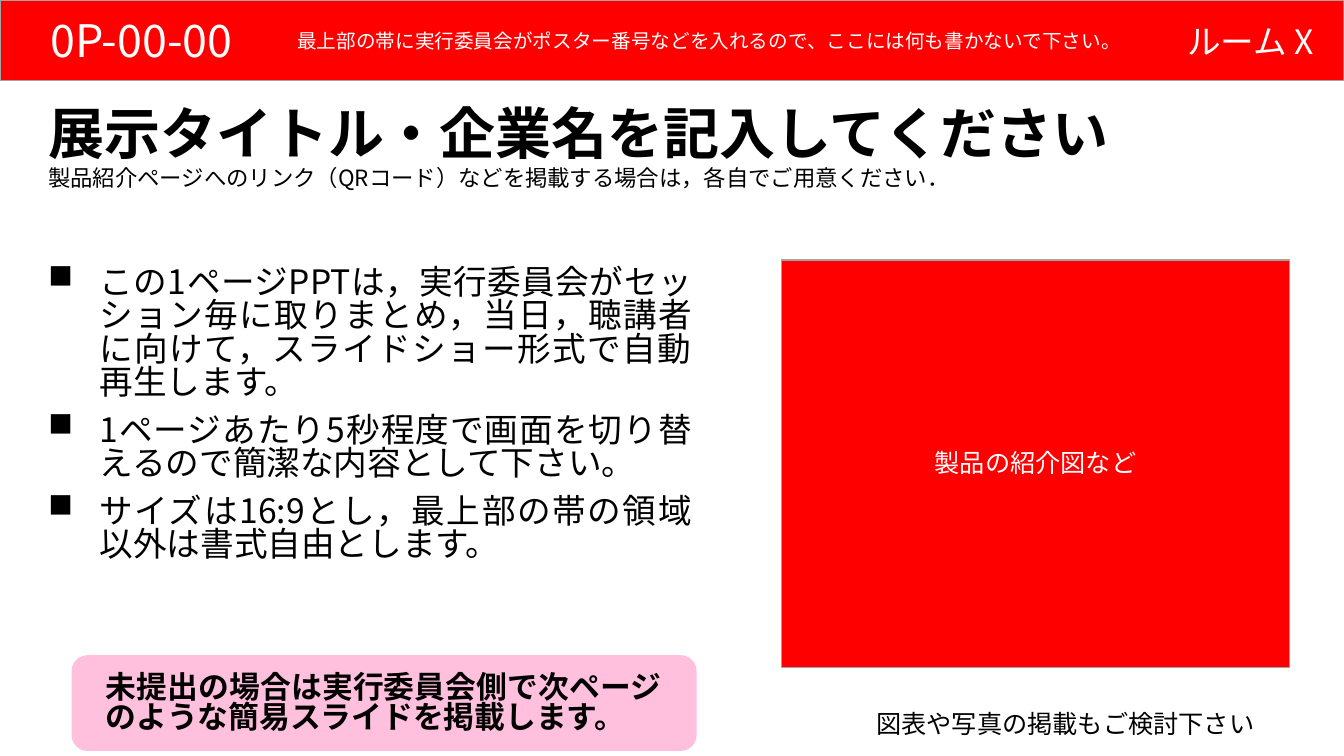
from lxml.etree import SubElement
from pptx import Presentation
from pptx.dml.color import RGBColor
from pptx.enum.lang import MSO_LANGUAGE_ID
from pptx.enum.shapes import MSO_SHAPE
from pptx.enum.text import MSO_ANCHOR, PP_ALIGN
from pptx.oxml.ns import qn
from pptx.util import Pt

RED = RGBColor(255, 0, 0)
PINK = RGBColor(255, 192, 222)
GREY = RGBColor(163, 163, 163)
BLACK = RGBColor(0, 0, 0)
WHITE = RGBColor(255, 255, 255)
FONT = "Noto Sans CJK JP"
PX = 9144
INDENT = 51
LEADING = 0.83

SIZE = (1333, 750)
BAND = (0, 0, 1333, 80)
FIGURE = (775, 258, 504, 404)
NOTICE = (71, 650, 620, 95)

HEADER = [
    ("最上部の帯に実行委員会がポスター番号などを入れるので、ここには何も書かないで下さい。",
     (285, 26, 866, 34), 14, PP_ALIGN.JUSTIFY),
    ("0P-00-00", (40, 13, 344, 64), 32, PP_ALIGN.JUSTIFY),
    ("ルーム X", (969, 20, 344, 50), 24, PP_ALIGN.RIGHT),
]
TITLE = [
    ("展示タイトル・企業名を記入してください", 40, True),
    ("製品紹介ページへのリンク（QRコード）などを掲載する場合は，各自でご用意ください．", 16, False),
]
POINTS = [
    "この1ページPPTは，実行委員会がセッション毎に取りまとめ，当日，聴講者に向けて，スライドショー形式で自動再生します。",
    "1ページあたり5秒程度で画面を切り替えるので簡潔な内容として下さい。",
    "サイズは16:9とし，最上部の帯の領域以外は書式自由とします。",
]
WARNING = "未提出の場合は実行委員会側で次ページのような簡易スライドを掲載します。"
LABEL = "製品の紹介図など"
CAPTION = "図表や写真の掲載もご検討下さい"


def scale(box):
    return [n * PX for n in box]


def panel(slide, box, fill, kind=MSO_SHAPE.RECTANGLE, line=None):
    shape = slide.shapes.add_shape(kind, *scale(box))
    shape.shadow.inherit = False
    shape.fill.solid()
    shape.fill.fore_color.rgb = fill
    if line is None:
        shape.line.fill.background()
    else:
        shape.line.color.rgb = line
        shape.line.width = Pt(1)
    return shape


def write(shape, rows, color=BLACK, align=PP_ALIGN.JUSTIFY, after=0,
          bullet=None, wrap=True, anchor=MSO_ANCHOR.TOP):
    frame = shape.text_frame
    frame.word_wrap = wrap
    frame.vertical_anchor = anchor
    frame.margin_top = Pt(3.6 + 0.075 * rows[0][1])
    for i, (text, size, bold) in enumerate(rows):
        para = frame.paragraphs[0] if i == 0 else frame.add_paragraph()
        para.alignment = align
        para.line_spacing = LEADING
        para.space_after = Pt(after)
        if bullet:
            props = para._p.get_or_add_pPr()
            props.set("marL", str(INDENT * PX))
            props.set("indent", str(-INDENT * PX))
            SubElement(props, qn("a:buChar"), char=bullet)
        run = para.add_run()
        run.text = text
        font = run.font
        font.size = Pt(size)
        font.bold = bold
        font.name = FONT
        font.color.rgb = color
        font.language_id = MSO_LANGUAGE_ID.JAPANESE
        SubElement(run._r.get_or_add_rPr(), qn("a:ea"), typeface=FONT)


def label(slide, box, rows, **style):
    write(slide.shapes.add_textbox(*scale(box)), rows, **style)


def main():
    deck = Presentation()
    deck.slide_width, deck.slide_height = scale(SIZE)
    slide = deck.slides.add_slide(deck.slide_layouts[6])

    panel(slide, BAND, RED, line=GREY)
    for text, box, size, align in HEADER:
        label(slide, box, [(text, size, False)], color=WHITE, align=align)

    label(slide, (38, 258, 658, 375), [(text, 24, False) for text in POINTS],
          after=10, bullet="■")
    label(slide, (38, 100, 1258, 111), TITLE, after=2)

    panel(slide, NOTICE, PINK, kind=MSO_SHAPE.ROUNDED_RECTANGLE)
    label(slide, (95, 661, 571, 84), [(WARNING, 22, True)])

    label(slide, (857, 701, 399, 40), [(CAPTION, 18, False)],
          align=PP_ALIGN.CENTER, wrap=False)
    figure = panel(slide, FIGURE, RED, line=GREY)
    write(figure, [(LABEL, 18, False)], color=WHITE,
          align=PP_ALIGN.CENTER, anchor=MSO_ANCHOR.MIDDLE)

    deck.save("out.pptx")


if __name__ == "__main__":
    main()
